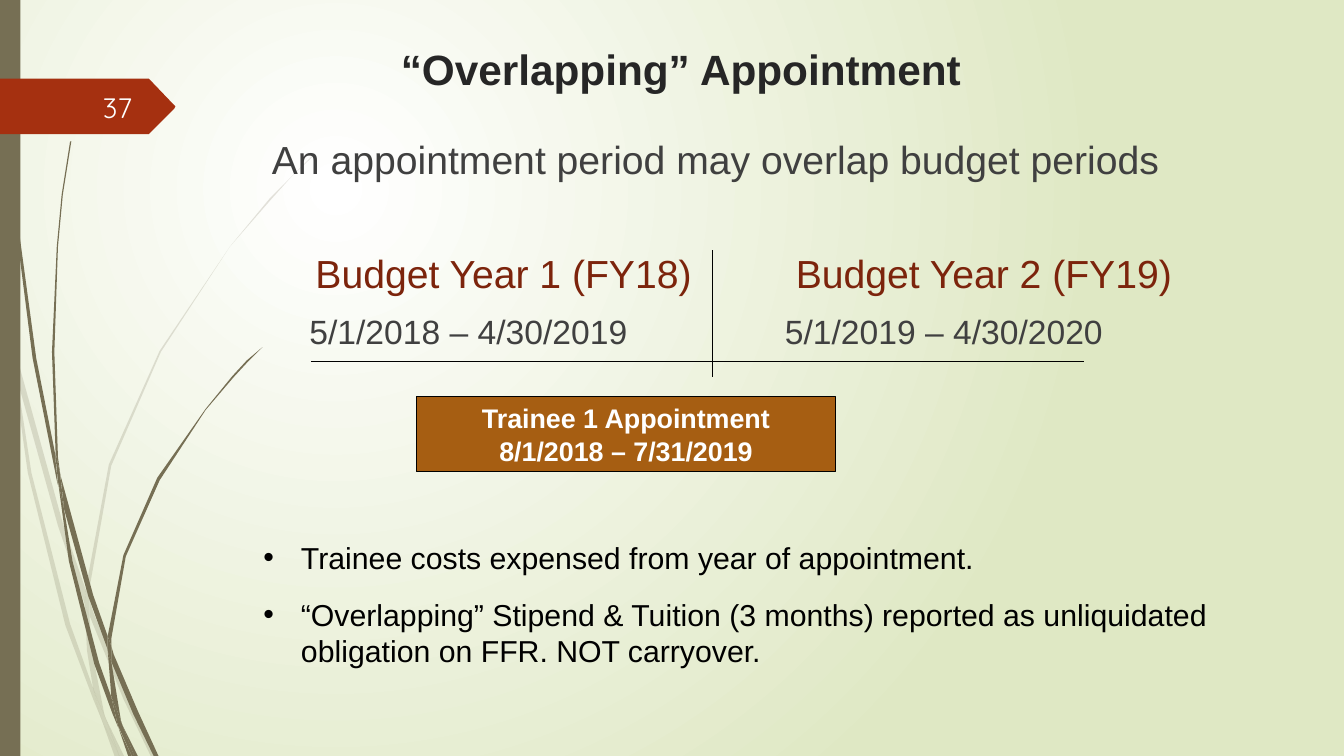
from dataclasses import dataclass

from lxml import etree
from pptx import Presentation
from pptx.dml.color import RGBColor
from pptx.enum.shapes import MSO_CONNECTOR, MSO_SHAPE
from pptx.enum.text import MSO_ANCHOR, PP_ALIGN
from pptx.oxml.ns import qn
from pptx.util import Inches, Pt

LINE, RECTANGLE = MSO_CONNECTOR.STRAIGHT, MSO_SHAPE.RECTANGLE
TOP, MIDDLE, BOTTOM = MSO_ANCHOR.TOP, MSO_ANCHOR.MIDDLE, MSO_ANCHOR.BOTTOM
LEFT, CENTER, RIGHT = PP_ALIGN.LEFT, PP_ALIGN.CENTER, PP_ALIGN.RIGHT

WHITE = RGBColor(0xFF, 0xFF, 0xFF)
BLACK = RGBColor(0x00, 0x00, 0x00)
PALE_GREEN = RGBColor(0xDF, 0xE8, 0xC4)
STEM = RGBColor(0x76, 0x6F, 0x54)
RED = RGBColor(0xA5, 0x30, 0x10)
DARK_RED = RGBColor(0x7C, 0x24, 0x0C)
BROWN = RGBColor(0xA6, 0x5E, 0x12)
GRAY = RGBColor(0x40, 0x40, 0x40)
TITLE_GRAY = RGBColor(0x26, 0x26, 0x26)
NUMBER_WHITE = RGBColor(0xFE, 0xFF, 0xFF)

Outline = list[tuple[int, int]]

# Outlines in hundredths of an inch
FAINT_STEMS: list[Outline] = [
    [(9, 292), (7, 268), (0, 235), (0, 249), (8, 287)],
    [(48, 435), (70, 499), (71, 488), (52, 433), (12, 288), (14, 313)],
    [(77, 506), (74, 496), (74, 509), (102, 578), (125, 626), (129, 626), (106, 576)],
    [(99, 626), (103, 626), (87, 593)],
    [(77, 569), (58, 516), (26, 391), (14, 313), (9, 292), (23, 391), (54, 517),
     (77, 578), (84, 595), (82, 589)],
    [(70, 499), (72, 538), (77, 569), (80, 577), (87, 593), (86, 589), (76, 538),
     (74, 509), (73, 507)],
    [(74, 486), (92, 385), (133, 291), (190, 204), (224, 165), (241, 146), (260, 128),
     (260, 127), (241, 146), (223, 164), (190, 204), (132, 290), (90, 384), (71, 486),
     (71, 488), (74, 496)],
    [(84, 595), (95, 626), (99, 626)],
    [(73, 507), (74, 509), (74, 496), (71, 488), (70, 499)],
    [(80, 577), (77, 569), (82, 589), (84, 595), (99, 626), (87, 593)],
]
SOLID_STEMS: list[Outline] = [
    [(6, 91), (14, 194), (27, 296), (47, 397), (48, 401), (46, 381), (46, 377),
     (30, 296), (16, 193), (6, 91), (4, 40), (3, 0), (2, 0), (3, 40)],
    [(73, 493), (89, 537), (89, 526), (77, 492), (50, 393), (53, 421)],
    [(94, 541), (92, 534), (92, 547), (110, 590), (127, 625), (131, 625), (114, 588)],
    [(92, 576), (82, 548), (60, 464), (53, 421), (48, 398), (57, 464), (78, 549),
     (93, 590), (98, 602), (97, 598)],
    [(50, 393), (48, 378), (45, 291), (48, 204), (52, 161), (59, 117), (58, 117),
     (51, 161), (47, 204), (43, 291), (46, 374)],
    [(111, 625), (114, 625), (101, 599)],
    [(48, 398), (53, 421), (50, 394), (50, 393), (46, 374), (46, 378)],
    [(92, 528), (104, 460), (132, 397), (170, 339), (193, 312), (205, 299), (217, 287),
     (204, 298), (192, 311), (170, 338), (130, 395), (102, 459), (89, 526), (92, 534)],
    [(98, 602), (106, 625), (109, 625)],
    [(89, 537), (92, 576), (97, 588), (101, 599), (100, 596), (92, 547), (90, 542)],
    [(89, 537), (90, 542), (92, 547), (92, 534), (89, 526)],
    [(97, 588), (92, 576), (97, 598), (98, 601), (109, 625), (111, 625), (101, 599)],
]
NUMBER_ARROW: Outline = [(0, 65), (123, 65), (144, 87), (145, 88), (144, 90), (123, 111), (0, 111)]


@dataclass
class Line:
    text: str
    size: float
    color: RGBColor
    bold: bool = False
    font: str = "Arial"
    before: float = 0
    after: float = 0
    spacing: float = 1.0
    bullet: bool = False
    tabs: tuple[float, ...] = ()


@dataclass
class TextBlock:
    left: float
    top: float
    width: float
    height: float
    lines: list[Line]
    align: PP_ALIGN = LEFT
    anchor: MSO_ANCHOR = TOP


BUDGET = dict(color=GRAY, spacing=0.9)
BULLET = dict(size=18, color=BLACK, after=12, bullet=True)
TEXT_BLOCKS = [
    TextBlock(2.08, 4.41, 8.06, 1.18, [
        Line("Trainee costs expensed from year of appointment.", **BULLET),
        Line("“Overlapping” Stipend & Tuition (3 months) reported as unliquidated "
             "obligation on FFR. NOT carryover.", **BULLET)]),
    TextBlock(2.15, 1.11, 8.17, 2.01, [
        Line("An appointment period may overlap budget periods", 23.3, before=8.3, **BUDGET),
        Line("\tBudget Year 1 (FY18)\tBudget Year 2 (FY19)", 23.3, DARK_RED,
             before=43, spacing=0.9, tabs=(0.36, 4.33)),
        Line("\t5/1/2018 – 4/30/2019\t5/1/2019 – 4/30/2020", 20,
             before=11, tabs=(0.31, 4.24), **BUDGET)]),
    TextBlock(0.48, 0.72, 0.71, 0.33, [Line("37", 16.7, NUMBER_WHITE, font="Quicksand")],
              RIGHT, MIDDLE),
    TextBlock(2.79, 0.28, 5.68, 0.55,
              [Line("“Overlapping” Appointment", 25.2, TITLE_GRAY, bold=True)], CENTER, BOTTOM),
]
TRAINEE = TextBlock(3.44, 3.28, 3.47, 0.62, [
    Line("Trainee 1 Appointment", 16, WHITE, bold=True),
    Line("8/1/2018 – 7/31/2019", 16, WHITE, bold=True)], CENTER, MIDDLE)


def set_background(page) -> None:
    fill = page.background.fill
    fill.gradient()
    for stop, color in zip(fill.gradient_stops, (WHITE, PALE_GREEN)):
        stop.color.rgb = color
    gradient = page.element.find(".//" + qn("a:gradFill"))
    gradient.remove(gradient.find(qn("a:lin")))
    circle = etree.SubElement(gradient, qn("a:path"), path="circle")
    etree.SubElement(circle, qn("a:fillToRect"), l="50000", t="50000", r="100000", b="100000")


def paint(shape, color: RGBColor) -> None:
    shape.shadow.inherit = False
    shape.fill.solid()
    shape.fill.fore_color.rgb = color
    shape.line.fill.background()


def draw_outline(page, outline: Outline, color: RGBColor, alpha: int = 100) -> None:
    builder = page.shapes.build_freeform(*outline[0], scale=Inches(0.01))
    builder.add_line_segments(outline[1:], close=True)
    shape = builder.convert_to_shape()
    paint(shape, color)
    if alpha < 100:
        tint = shape.element.spPr.find(".//" + qn("a:srgbClr"))
        etree.SubElement(tint, qn("a:alpha"), val=str(alpha * 1000))


def write_text(shape, block: TextBlock) -> None:
    frame = shape.text_frame
    frame.word_wrap = True
    frame.vertical_anchor = block.anchor
    frame.text = "\n".join(line.text for line in block.lines)
    for para, line in zip(frame.paragraphs, block.lines):
        para.alignment = block.align
        para.line_spacing = line.spacing
        para.space_before, para.space_after = Pt(line.before), Pt(line.after)
        properties = para._p.get_or_add_pPr()
        if line.bullet:
            properties.set("marL", str(Inches(0.31)))
            properties.set("indent", str(-Inches(0.31)))
            etree.SubElement(properties, qn("a:buFont"), typeface="Arial")
            etree.SubElement(properties, qn("a:buChar"), char="•")
        if line.tabs:
            stops = etree.SubElement(properties, qn("a:tabLst"))
            for position in line.tabs:
                etree.SubElement(stops, qn("a:tab"), pos=str(Inches(position)), algn="l")
        for span in para.runs:
            span.font.name, span.font.size = line.font, Pt(line.size)
            span.font.bold, span.font.color.rgb = line.bold, line.color


def place(block: TextBlock) -> list[int]:
    return [Inches(value) for value in (block.left, block.top, block.width, block.height)]


def draw_line(page, x1: float, y1: float, x2: float, y2: float) -> None:
    line = page.shapes.add_connector(LINE, Inches(x1), Inches(y1), Inches(x2), Inches(y2))
    line.line.color.rgb, line.line.width = BLACK, Pt(1)
    etree.SubElement(line.element.spPr, qn("a:effectLst"))


def main() -> None:
    deck = Presentation()
    deck.slide_width, deck.slide_height = Inches(11.11), Inches(6.25)
    page = deck.slides.add_slide(deck.slide_layouts[6])

    # Backdrop: gradient, stems, side bar and number arrow
    set_background(page)
    for outline in FAINT_STEMS:
        draw_outline(page, outline, STEM, 20)
    for outline in SOLID_STEMS:
        draw_outline(page, outline, STEM)
    bar = page.shapes.add_shape(RECTANGLE, 0, 0, Inches(0.17), deck.slide_height)
    paint(bar, STEM)
    draw_outline(page, NUMBER_ARROW, RED)

    # Title, number, budget years and bullets
    for block in TEXT_BLOCKS:
        write_text(page.shapes.add_textbox(*place(block)), block)

    # Timeline with the trainee's appointment
    trainee = page.shapes.add_shape(RECTANGLE, *place(TRAINEE))
    paint(trainee, BROWN)
    trainee.line.color.rgb, trainee.line.width = BLACK, Pt(0.75)
    write_text(trainee, TRAINEE)
    draw_line(page, 2.57, 2.99, 8.96, 2.99)
    draw_line(page, 5.89, 2.07, 5.89, 3.12)

    deck.save("out.pptx")


if __name__ == "__main__":
    main()
